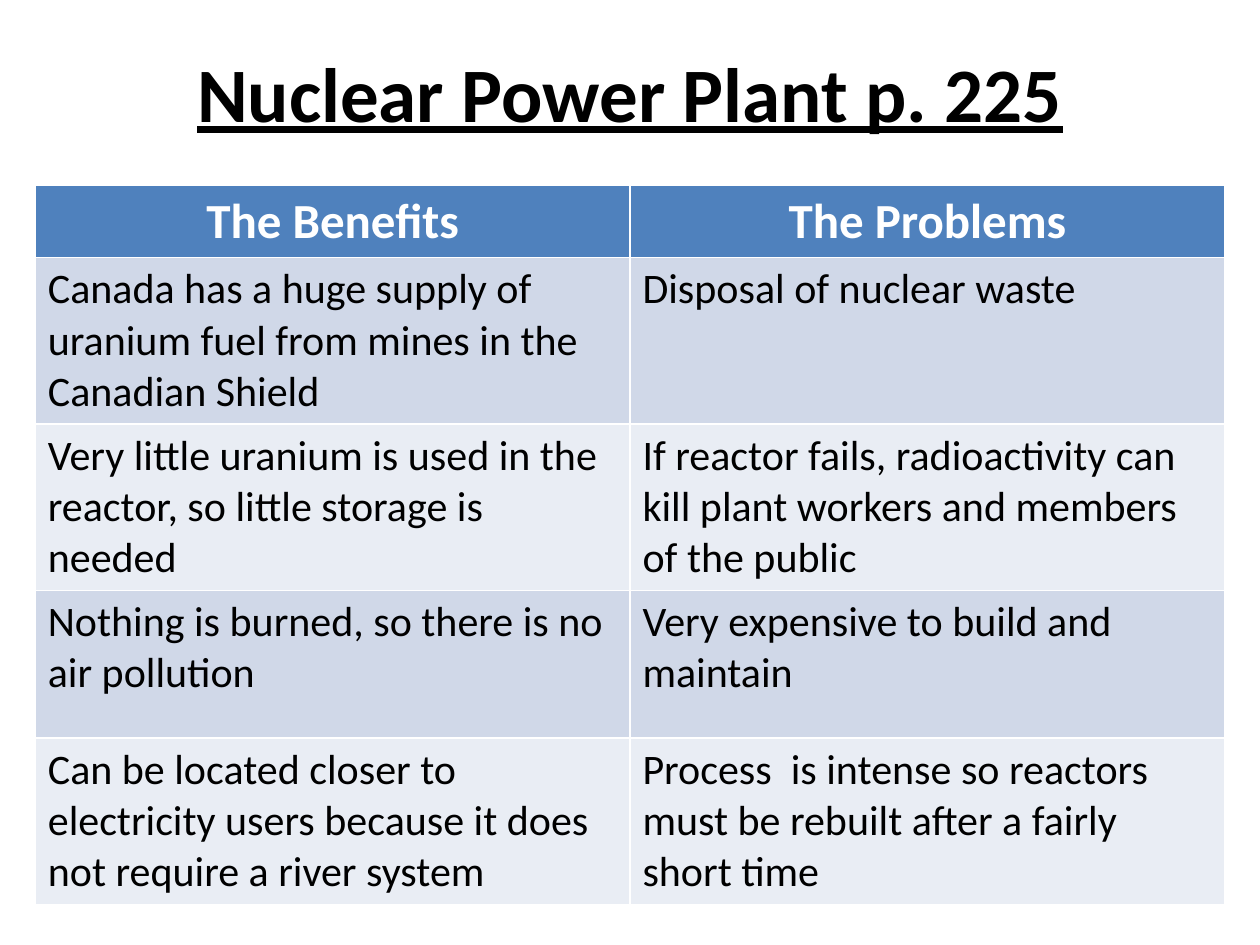
from dataclasses import dataclass

from pptx import Presentation
from pptx import util as u
from pptx.dml.color import RGBColor
from pptx.enum import text


@dataclass(frozen=True)
class Theme:
    font: str = "Calibri"
    ink: str = "000000"
    header_ink: str = "FFFFFF"
    header_fill: str = "4F81BD"
    band_fills: tuple = ("D0D8E8", "E9EDF4")
    title_size: int = 44
    header_size: int = 28
    body_size: int = 24


THEME = Theme()
WIDTH, HEIGHT = u.Inches(10), u.Inches(7.5)
TABLE_LEFT, TABLE_TOP = u.Inches(0.28), u.Inches(1.47)
COLUMN_WIDTH = u.Inches(4.72)
HEADER_HEIGHT, BODY_HEIGHT = u.Inches(0.55), u.Inches(1.17)

HEADINGS = ("The Benefits", "The Problems")
COMPARISONS = (
    ("Canada has a huge supply of uranium fuel from mines in the Canadian Shield",
     "Disposal of nuclear waste"),
    ("Very little uranium is used in the reactor, so little storage is needed",
     "If reactor fails, radioactivity can kill plant workers and members of the public"),
    ("Nothing is burned, so there is no air pollution",
     "Very expensive to build and maintain"),
    ("Can be located closer to electricity users because it does not require a river system",
     "Process  is intense so reactors must be rebuilt after a fairly short time"),
)


def write(frame, words, size, color, bold=False, underline=False, centred=False):
    paragraph = frame.paragraphs[0]
    paragraph.alignment = text.PP_ALIGN.CENTER if centred else text.PP_ALIGN.LEFT
    run = paragraph.add_run()
    run.text = words
    run.font.name = THEME.font
    run.font.size = u.Pt(size)
    run.font.bold = bold
    run.font.underline = underline
    run.font.color.rgb = RGBColor.from_string(color)


def add_title(slide, words):
    title = slide.shapes.title
    title.left, title.top = int(WIDTH * 0.05), int(HEIGHT * 0.04)
    title.width, title.height = int(WIDTH * 0.9), u.Inches(0.85)
    title.text_frame.vertical_anchor = text.MSO_ANCHOR.MIDDLE
    write(title.text_frame, words, THEME.title_size, THEME.ink,
          bold=True, underline=True, centred=True)


def fill_row(table, row, entries, fill, **style):
    for column, words in enumerate(entries):
        cell = table.cell(row, column)
        cell.fill.solid()
        cell.fill.fore_color.rgb = RGBColor.from_string(fill)
        write(cell.text_frame, words, **style)


def add_comparison_table(slide, headings, comparisons):
    """Add a header row and banded body rows; the default style draws white borders."""
    row_count, column_count = len(comparisons) + 1, len(headings)
    table = slide.shapes.add_table(
        row_count, column_count, TABLE_LEFT, TABLE_TOP,
        COLUMN_WIDTH * column_count,
        HEADER_HEIGHT + BODY_HEIGHT * len(comparisons)).table
    for column in table.columns:
        column.width = COLUMN_WIDTH
    for index, row in enumerate(table.rows):
        row.height = BODY_HEIGHT if index else HEADER_HEIGHT

    fill_row(table, 0, headings, THEME.header_fill, size=THEME.header_size,
             color=THEME.header_ink, bold=True, centred=True)
    for index, entries in enumerate(comparisons):
        band = THEME.band_fills[index % len(THEME.band_fills)]
        fill_row(table, index + 1, entries, band,
                 size=THEME.body_size, color=THEME.ink)


def main():
    deck = Presentation()
    deck.slide_width, deck.slide_height = WIDTH, HEIGHT
    slide = deck.slides.add_slide(deck.slide_layouts.get_by_name("Title Only"))
    add_title(slide, "Nuclear Power Plant p. 225")
    add_comparison_table(slide, HEADINGS, COMPARISONS)
    deck.save("out.pptx")


if __name__ == "__main__":
    main()
